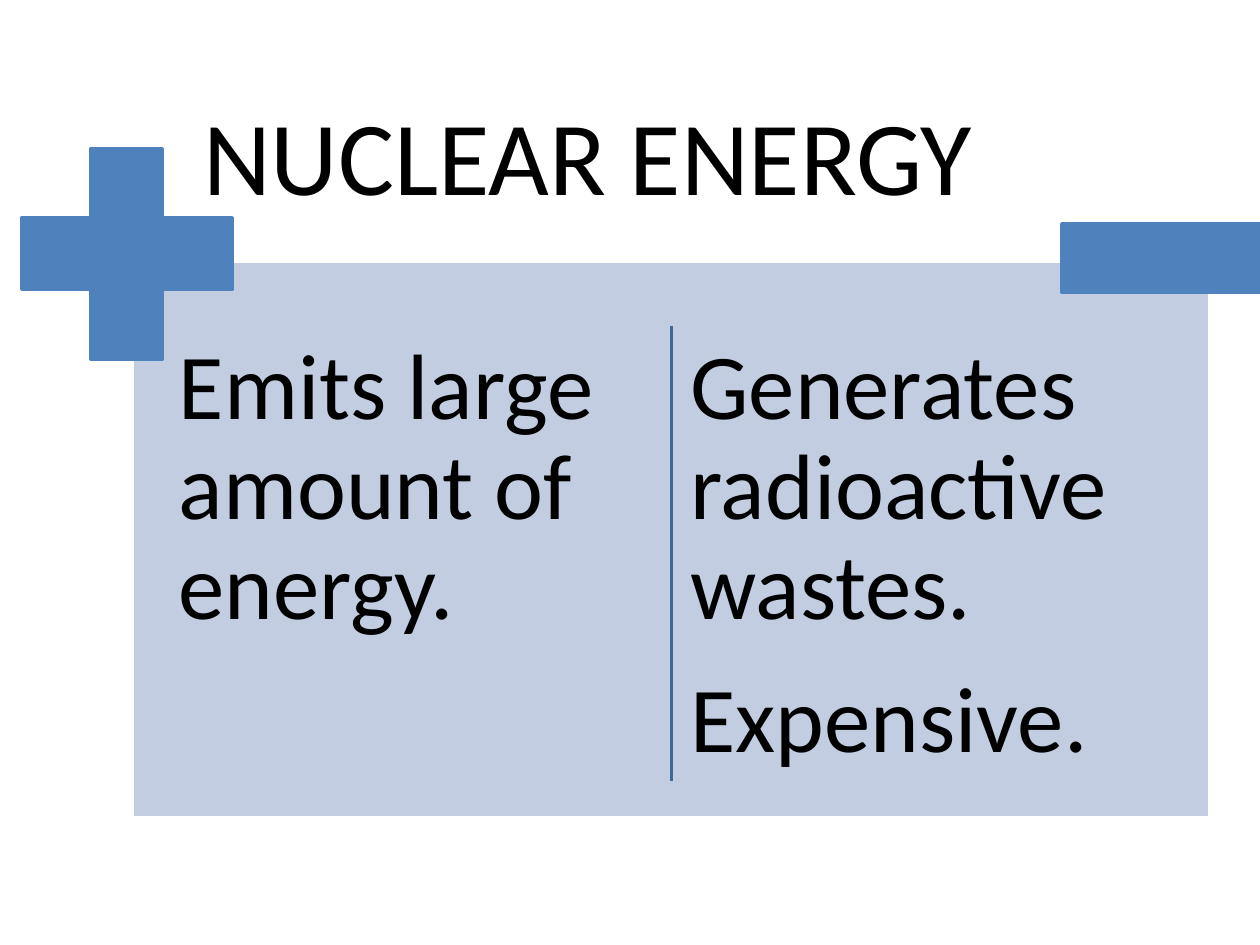
from dataclasses import dataclass

from lxml import etree
from pptx import Presentation
from pptx.dml.color import RGBColor
from pptx.enum.shapes import MSO_CONNECTOR, MSO_SHAPE
from pptx.enum.text import MSO_ANCHOR, MSO_AUTO_SIZE, PP_ALIGN
from pptx.oxml.ns import qn
from pptx.shapes.autoshape import Shape
from pptx.shapes.placeholder import SlidePlaceholder
from pptx.slide import Slide
from pptx.util import Inches, Pt

RECTANGLE = MSO_SHAPE.RECTANGLE
PLUS = MSO_SHAPE.CROSS
STRAIGHT = MSO_CONNECTOR.STRAIGHT
TOP = MSO_ANCHOR.TOP
FIXED_SIZE = MSO_AUTO_SIZE.NONE
LEFT = PP_ALIGN.LEFT
CENTER = PP_ALIGN.CENTER
TWO_CONTENT = 3


@dataclass(frozen=True)
class Theme:
    font: str = "Calibri"
    title_size: Pt = Pt(60)
    body_size: Pt = Pt(53)
    body_gap: Pt = Pt(18.5)
    line_width: Pt = Pt(2)
    text: RGBColor = RGBColor(0, 0, 0)
    white: RGBColor = RGBColor(255, 255, 255)
    panel: RGBColor = RGBColor(0xC2, 0xCD, 0xE1)
    accent: RGBColor = RGBColor(0x4F, 0x81, 0xBD)
    divider: RGBColor = RGBColor(0x3F, 0x67, 0x97)


@dataclass(frozen=True)
class Box:
    left: float
    top: float
    width: float
    height: float


@dataclass(frozen=True)
class Block:
    kind: MSO_SHAPE
    box: Box
    fill: RGBColor
    line: RGBColor


@dataclass(frozen=True)
class Column:
    placeholder: int
    left: float
    points: tuple[str, ...]


THEME = Theme()
TITLE_BOX = Box(1.5, 0.67, 6.33, 1.11)
PANEL = Block(RECTANGLE, Box(1.05, 2.07, 8.55, 4.42), THEME.panel, THEME.white)
PLUS_SIGN = Block(PLUS, Box(0.17, 1.18, 1.67, 1.67), THEME.accent, THEME.accent)
MINUS_SIGN = Block(RECTANGLE, Box(8.43, 1.78, 1.57, 0.54), THEME.accent, THEME.accent)
COLUMNS = (
    Column(1, 1.31, ("Emits large amount of energy.",)),
    Column(2, 5.37, ("Generates radioactive wastes.", "Expensive.")),
)


def add_block(slide: Slide, block: Block) -> Shape:
    box = block.box
    shape = slide.shapes.add_shape(
        block.kind, Inches(box.left), Inches(box.top), Inches(box.width), Inches(box.height)
    )
    shape.shadow.inherit = False
    shape.fill.solid()
    shape.fill.fore_color.rgb = block.fill
    shape.line.color.rgb = block.line
    shape.line.width = THEME.line_width
    return shape


def add_divider(slide: Slide, x: float, top: float, bottom: float) -> None:
    divider = slide.shapes.add_connector(
        STRAIGHT, Inches(x), Inches(top), Inches(x), Inches(bottom)
    )
    divider.line.color.rgb = THEME.divider
    divider.line.width = THEME.line_width
    etree.SubElement(divider._element.spPr, qn("a:effectLst"))


def fill_placeholder(
    placeholder: SlidePlaceholder,
    box: Box,
    lines: tuple[str, ...],
    size: Pt,
    alignment: PP_ALIGN,
) -> None:
    placeholder.left, placeholder.top = Inches(box.left), Inches(box.top)
    placeholder.width, placeholder.height = Inches(box.width), Inches(box.height)
    frame = placeholder.text_frame
    frame.auto_size = FIXED_SIZE
    frame.vertical_anchor = TOP
    for index, line in enumerate(lines):
        paragraph = frame.add_paragraph() if index else frame.paragraphs[0]
        paragraph.alignment = alignment
        paragraph.space_before = Pt(0)
        run = paragraph.add_run()
        run.text = line
        run.font.name = THEME.font
        run.font.size = size
        run.font.color.rgb = THEME.text


def bring_to_front(slide: Slide, placeholder: SlidePlaceholder) -> None:
    slide.shapes._spTree.append(placeholder._element)


def fill_column(slide: Slide, column: Column) -> None:
    placeholder = slide.placeholders[column.placeholder]
    box = Box(column.left, 2.58, 3.97, 3.78)
    fill_placeholder(placeholder, box, column.points, THEME.body_size, LEFT)
    frame = placeholder.text_frame
    frame.margin_left = frame.margin_right = Inches(0.11)
    frame.margin_top = frame.margin_bottom = Inches(0.11)
    for paragraph in frame.paragraphs:
        paragraph.line_spacing = 0.9
        paragraph.space_after = THEME.body_gap
        properties = paragraph._p.get_or_add_pPr()
        properties.set("marL", "0")
        properties.set("indent", "0")
        etree.SubElement(properties, qn("a:buNone"))
    bring_to_front(slide, placeholder)


def main() -> None:
    presentation = Presentation()
    presentation.slide_width = Inches(10)
    presentation.slide_height = Inches(7.5)
    slide = presentation.slides.add_slide(presentation.slide_layouts[TWO_CONTENT])

    add_block(slide, PANEL)
    for column in COLUMNS:
        fill_column(slide, column)
    plus_sign = add_block(slide, PLUS_SIGN)
    plus_sign.adjustments[0] = 0.33
    add_block(slide, MINUS_SIGN)
    add_divider(slide, 5.33, 2.59, 6.2)

    title = slide.shapes.title
    fill_placeholder(title, TITLE_BOX, ("NUCLEAR ENERGY",), THEME.title_size, CENTER)
    title.text_frame.word_wrap = False
    bring_to_front(slide, title)
    presentation.save("out.pptx")


if __name__ == "__main__":
    main()
